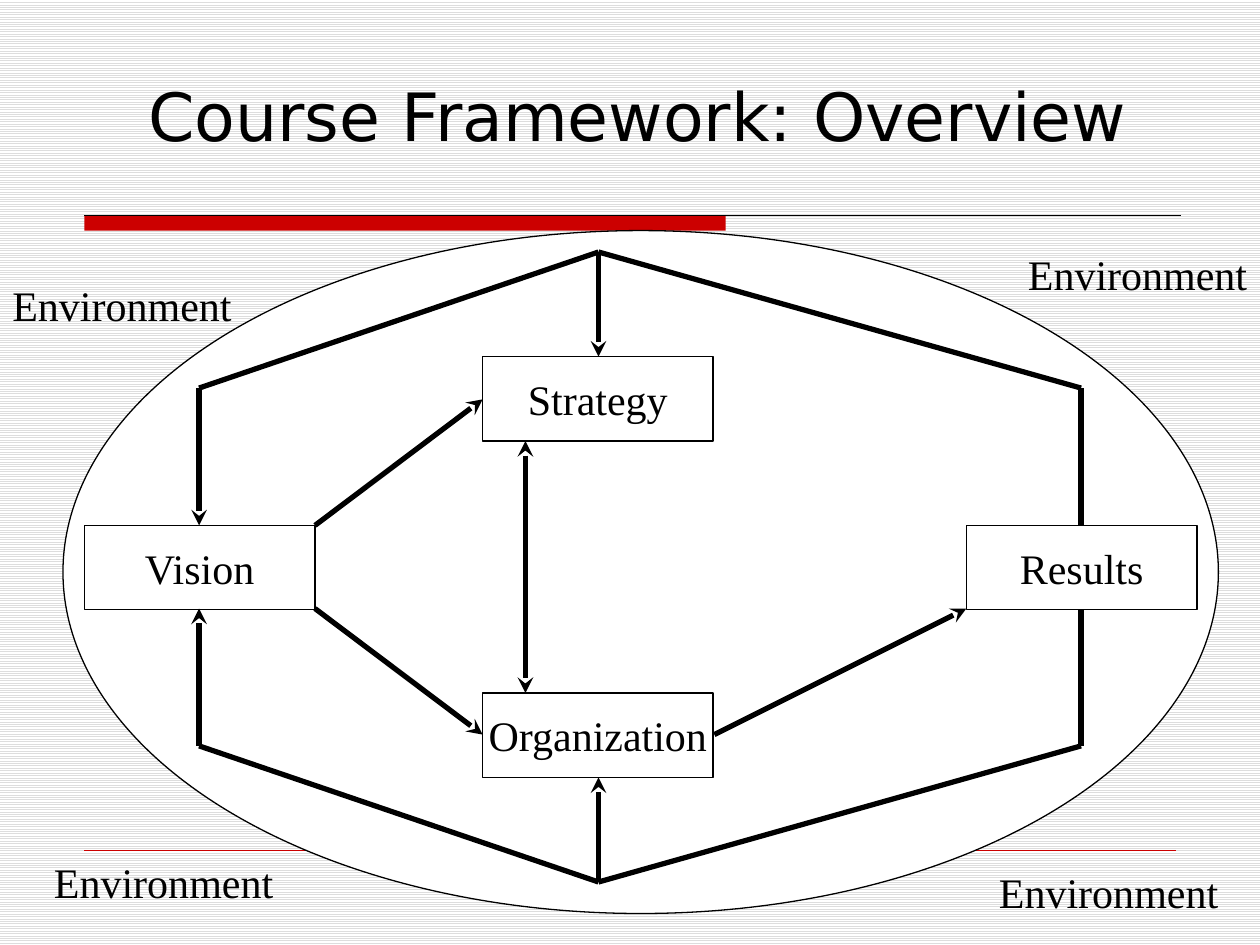
from lxml import etree
from pptx import Presentation
from pptx.dml.color import RGBColor
from pptx.enum.dml import MSO_PATTERN
from pptx.enum.shapes import MSO_CONNECTOR, MSO_SHAPE
from pptx.enum.text import MSO_ANCHOR, MSO_AUTO_SIZE, PP_ALIGN
from pptx.oxml.ns import qn
from pptx.util import Inches, Pt

BLACK = RGBColor(0x00, 0x00, 0x00)
WHITE = RGBColor(0xFF, 0xFF, 0xFF)
RED = RGBColor(0xCC, 0x00, 0x00)
GRAY = RGBColor(0xDD, 0xDD, 0xDD)

TITLE = {"name": "DejaVu Sans", "size": Pt(38)}
LABEL = {"name": "Times New Roman", "size": Pt(24)}


def write(shape, text, style, align, anchor, wrap):
    frame = shape.text_frame
    frame.word_wrap = wrap
    frame.vertical_anchor = anchor
    para = frame.paragraphs[0]
    para.alignment = align
    span = para.add_run()
    span.text = text
    span.font.color.rgb = BLACK
    for key, value in style.items():
        setattr(span.font, key, value)


def connect(start, end, color=BLACK, width=3, arrows=()):
    line = page.shapes.add_connector(
        MSO_CONNECTOR.STRAIGHT, *[Inches(v) for v in (*start, *end)])
    line.line.color.rgb = color
    line.line.width = Pt(width)
    for arrow in arrows:
        etree.SubElement(line.line._get_or_add_ln(), qn(f"a:{arrow}"), type="stealth")
    etree.SubElement(line._element.spPr, qn("a:effectLst"))


deck = Presentation()
deck.slide_width, deck.slide_height = Inches(10), Inches(7.5)
page = deck.slides.add_slide(deck.slide_layouts[6])

backdrop = page.background.fill
backdrop.patterned()
backdrop.pattern = MSO_PATTERN.LIGHT_HORIZONTAL
backdrop.fore_color.rgb = GRAY
backdrop.back_color.rgb = WHITE

bar = page.shapes.add_shape(
    MSO_SHAPE.RECTANGLE, Inches(0.67), Inches(1.71), Inches(5.09), Inches(0.12))
bar.shadow.inherit = False
bar.fill.solid()
bar.fill.fore_color.rgb = RED
bar.line.fill.background()
connect((0.67, 1.71), (9.37, 1.71), BLACK, 0.75)
connect((0.67, 6.75), (9.33, 6.75), RED, 0.25)

title = page.shapes.add_textbox(Inches(1.08), Inches(0.25), Inches(8.27), Inches(1.33))
write(title, "Course Framework: Overview", TITLE, PP_ALIGN.LEFT, MSO_ANCHOR.MIDDLE, True)

oval = page.shapes.add_shape(
    MSO_SHAPE.OVAL, Inches(0.5), Inches(1.83), Inches(9.17), Inches(5.42))
oval.shadow.inherit = False
oval.fill.solid()
oval.fill.fore_color.rgb = WHITE
oval.line.color.rgb = BLACK
oval.line.width = Pt(0.75)

stages = [
    ("Organization", 3.83, 5.5),
    ("Results", 7.67, 4.17),
    ("Strategy", 3.83, 2.83),
    ("Vision", 0.67, 4.17),
]
for name, left, top in stages:
    box = page.shapes.add_shape(
        MSO_SHAPE.RECTANGLE, Inches(left), Inches(top), Inches(1.83), Inches(0.67))
    box.shadow.inherit = False
    box.fill.background()
    box.line.color.rgb = BLACK
    box.line.width = Pt(0.75)
    write(box, name, LABEL, PP_ALIGN.CENTER, MSO_ANCHOR.MIDDLE, False)

connect((4.17, 3.5), (4.17, 5.5), arrows=("headEnd", "tailEnd"))
connect((5.67, 5.83), (7.67, 4.83), arrows=("tailEnd",))

loops = [
    (2, 2.83, 3.08, 4.17, 3.17),
    (7, 6.17, 5.92, 4.83, 5.83),
]
for peak, middle_edge, shoulder, side_edge, target in loops:
    connect((2.5, side_edge), (3.83, target), arrows=("tailEnd",))
    connect((4.75, peak), (4.75, middle_edge), arrows=("tailEnd",))
    connect((1.58, shoulder), (1.58, side_edge), arrows=("tailEnd",))
    connect((8.58, shoulder), (8.58, side_edge))
    for side in (1.58, 8.58):
        connect((side, shoulder), (4.75, peak))

for left, top in [(8.06, 1.92), (7.83, 6.83), (0.33, 6.75), (0, 2.17)]:
    label = page.shapes.add_textbox(Inches(left), Inches(top), Inches(1.94), Inches(0.5))
    write(label, "Environment", LABEL, PP_ALIGN.LEFT, MSO_ANCHOR.TOP, False)
    label.text_frame.auto_size = MSO_AUTO_SIZE.SHAPE_TO_FIT_TEXT

deck.save("out.pptx")
